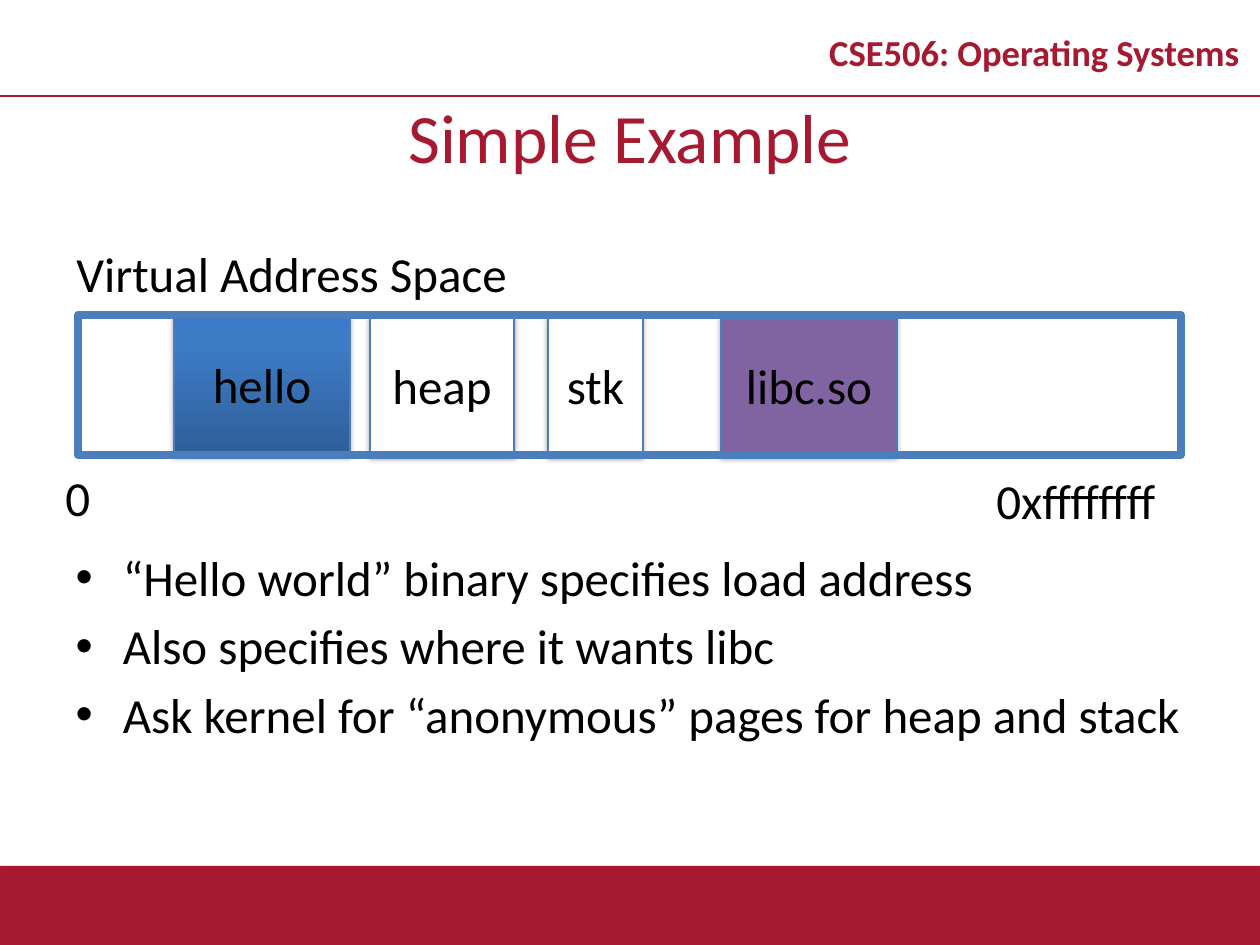
import dataclasses

import lxml.etree
import pptx
import pptx.dml.color
import pptx.enum.shapes
import pptx.enum.text
import pptx.oxml.ns
import pptx.util

ALIGN = pptx.enum.text.PP_ALIGN
ANCHOR = pptx.enum.text.MSO_ANCHOR
RECTANGLE = pptx.enum.shapes.MSO_SHAPE.RECTANGLE
EMU_PER_PX = 914400 / 126


@dataclasses.dataclass(frozen=True)
class Theme:
    font: str = "Calibri"
    crimson: str = "A71930"
    black: str = "000000"
    white: str = "FFFFFF"
    blue: str = "4B7EBC"
    purple: str = "8064A2"
    gradient: tuple = ((0, "2F5F99"), (80, "3D7CC7"), (100, "3A7CCB"))
    header_size: float = 20.9
    title_size: float = 39.6
    text_size: float = 28
    thin: float = 0.75
    rule: float = 1
    thick: float = 4.5


THEME = Theme()


def px(*lengths):
    return [pptx.util.Emu(round(length * EMU_PER_PX)) for length in lengths]


def color(value):
    return pptx.dml.color.RGBColor.from_string(value)


def add_element(parent, name, **attributes):
    values = {key: str(value) for key, value in attributes.items()}
    return lxml.etree.SubElement(parent, pptx.oxml.ns.qn(name), values)


def write(paragraph, text, size=THEME.text_size, ink=THEME.black, bold=False, align=None):
    paragraph.alignment = align
    run = paragraph.add_run()
    run.text = text
    run.font.name = THEME.font
    run.font.size = pptx.util.Pt(size)
    run.font.bold = bold
    run.font.color.rgb = color(ink)


def add_label(slide, box, text, anchor=ANCHOR.TOP, **style):
    shape = slide.shapes.add_textbox(*px(*box))
    shape.text_frame.word_wrap = True
    shape.text_frame.vertical_anchor = anchor
    write(shape.text_frame.paragraphs[0], text, **style)
    return shape


def add_shadow(shape):
    effects = shape._element.spPr.find(pptx.oxml.ns.qn("a:effectLst"))
    shadow = add_element(effects, "a:outerShdw", blurRad=pptx.util.Pt(3.1),
                         dist=pptx.util.Pt(1.8), dir=5400000, rotWithShape=0)
    shade = add_element(shadow, "a:srgbClr", val=THEME.black)
    add_element(shade, "a:alpha", val=35000)


def fill_gradient(shape):
    shape.fill.gradient()
    shape.fill.gradient_angle = 90
    stops = shape._element.spPr.find(".//" + pptx.oxml.ns.qn("a:gsLst"))
    for stop in list(stops):
        stops.remove(stop)
    for position, value in THEME.gradient:
        stop = add_element(stops, "a:gs", pos=position * 1000)
        add_element(stop, "a:srgbClr", val=value)


def add_rectangle(slide, box, fill=None, line=None, width=THEME.thin):
    shape = slide.shapes.add_shape(RECTANGLE, *px(*box))
    shape.shadow.inherit = False
    if fill == THEME.gradient:
        fill_gradient(shape)
    elif fill:
        shape.fill.solid()
        shape.fill.fore_color.rgb = color(fill)
    else:
        shape.fill.background()
    if line:
        shape.line.color.rgb = color(line)
        shape.line.width = pptx.util.Pt(width)
    else:
        shape.line.fill.background()
    return shape


def add_header(slide, box):
    left, top, width, height = box
    bottom = top + height
    rule = slide.shapes.add_connector(pptx.enum.shapes.MSO_CONNECTOR.STRAIGHT,
                                      *px(left, bottom, left + width, bottom))
    rule.line.color.rgb = color(THEME.crimson)
    rule.line.width = pptx.util.Pt(THEME.rule)
    add_element(rule._element.spPr, "a:effectLst")
    label = add_label(slide, (left + 809, top + 16, width - 809, height - 16),
                      "CSE506: Operating Systems", ANCHOR.MIDDLE,
                      size=THEME.header_size, ink=THEME.crimson, bold=True, align=ALIGN.CENTER)
    label.text_frame.paragraphs[0].line_spacing = 0.8


def add_footer(slide, box):
    add_shadow(add_rectangle(slide, box, THEME.crimson))


def place(placeholder, box, anchor):
    placeholder.left, placeholder.top, placeholder.width, placeholder.height = px(*box)
    placeholder.text_frame.auto_size = pptx.enum.text.MSO_AUTO_SIZE.NONE
    placeholder.text_frame.vertical_anchor = anchor
    return placeholder.text_frame


def add_title(slide, box, text):
    frame = place(slide.shapes.title, box, ANCHOR.MIDDLE)
    write(frame.paragraphs[0], text, THEME.title_size, THEME.crimson, align=ALIGN.CENTER)


def add_points(slide, box, points):
    frame = place(slide.placeholders[1], box, ANCHOR.TOP)
    for index, point in enumerate(points):
        paragraph = frame.add_paragraph() if index else frame.paragraphs[0]
        write(paragraph, point)


def add_address_space(slide, box):
    left, top, width, height = box
    segments = (
        ("hello", 96, 176, THEME.gradient, -1),
        ("libc.so", 643, 176, THEME.purple, 0),
        ("heap", 292, 144, THEME.white, 0),
        ("stk", 470, 95, THEME.white, 0),
    )
    add_label(slide, (left - 14, top - 78, 953, 72), "Virtual Address Space")
    add_label(slide, (left - 25, top + 146, 53, 72), "0")
    add_label(slide, (left + width - 197, top + 149, 198, 72), "0xffffffff")
    for name, offset, span, fill, rise in segments:
        segment = add_rectangle(slide, (left + offset, top + rise, span, height), fill, THEME.blue)
        add_shadow(segment)
        segment.text_frame.vertical_anchor = ANCHOR.MIDDLE
        write(segment.text_frame.paragraphs[0], name, align=ALIGN.CENTER)
    add_rectangle(slide, box, line=THEME.blue, width=THEME.thick)


def main():
    presentation = pptx.Presentation()
    presentation.slide_width, presentation.slide_height = px(1260, 945)
    slide = presentation.slides.add_slide(presentation.slide_layouts[1])
    add_footer(slide, (0, 866, 1260, 79))
    add_header(slide, (0, 0, 1260, 96))
    add_title(slide, (0, 96, 1260, 79), "Simple Example")
    add_points(slide, (63, 541, 1134, 319), (
        "“Hello world” binary specifies load address",
        "Also specifies where it wants libc",
        "Ask kernel for “anonymous” pages for heap and stack",
    ))
    add_address_space(slide, (78, 315, 1103, 140))
    presentation.save("out.pptx")


if __name__ == "__main__":
    main()
